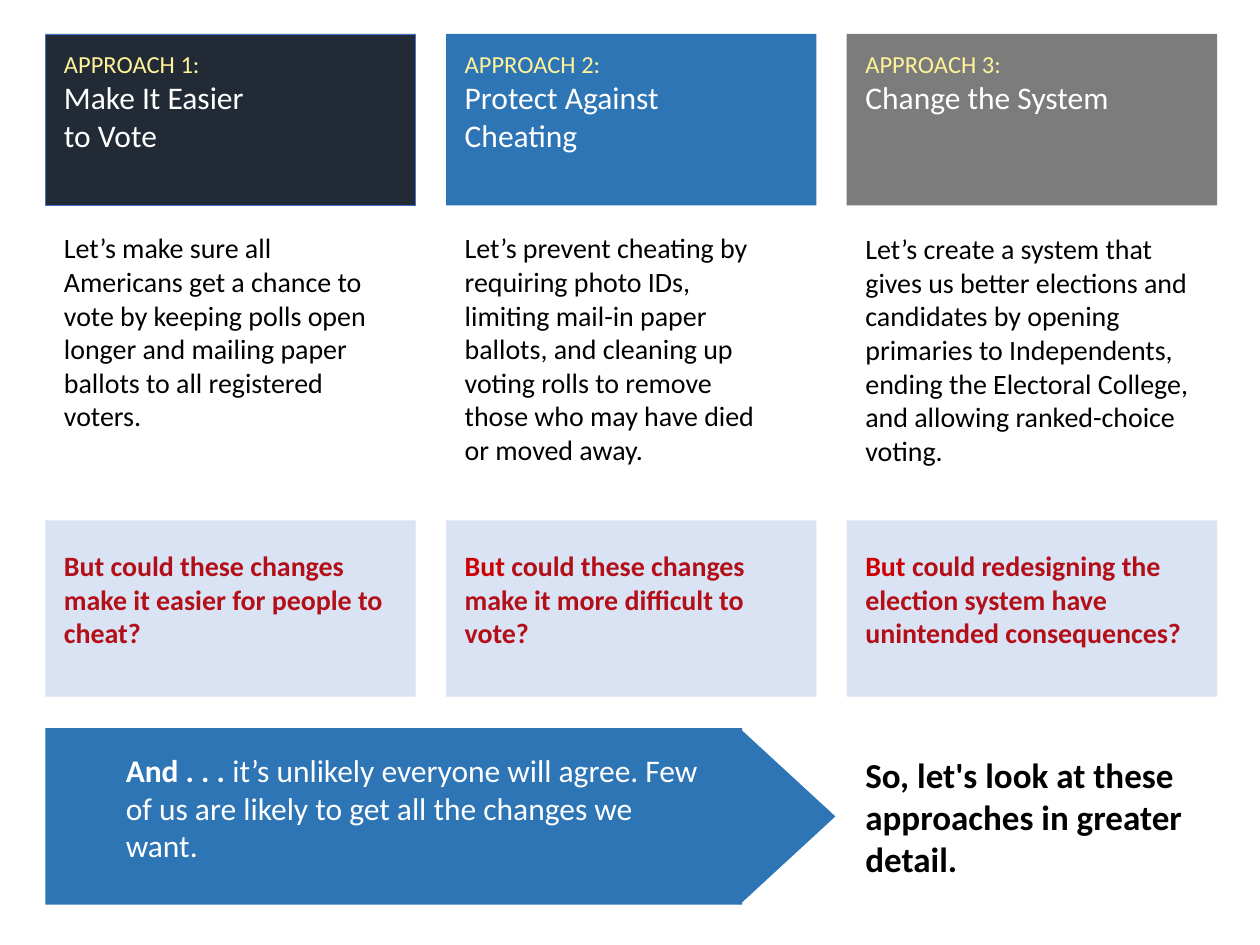
from pptx import Presentation
from pptx.dml.color import RGBColor
from pptx.enum.shapes import MSO_SHAPE
from pptx.enum.text import MSO_ANCHOR
from pptx.util import Inches, Pt

RECT, TRIANGLE = MSO_SHAPE.RECTANGLE, MSO_SHAPE.ISOSCELES_TRIANGLE
TOP, MIDDLE = MSO_ANCHOR.TOP, MSO_ANCHOR.MIDDLE

COLORS = {
    "navy": "222A35", "blue": "2E75B6", "gray": "7C7C7C", "pale": "DAE3F3",
    "outline": "4472C4", "yellow": "FFF399", "white": "FFFFFF",
    "black": "000000", "red": "CC0000", "dark_red": "B30F18",
}
FONT = "Calibri"

# Three-column grid, in inches
LEFT, PITCH, COL_W, TEXT_DX = 0.36, 3.18, 2.94, 0.05
HEAD_Y, HEAD_H = 0.27, 1.36
QUESTION_Y, QUESTION_H = 4.13, 1.4
ARROW_Y, ARROW_H, ARROW_W, TIP = 5.78, 1.4, 5.53, 0.76
HEAD_LINE = 22  # points taken by one heading line

# fill, heading, heading lines, body, lead of question, rest, text width
APPROACHES = [
    ("navy", "Make It Easier \vto Vote", 2,
     "Let’s make sure all\vAmericans get a chance to vote by keeping polls "
     "open longer and mailing paper ballots to all registered voters.",
     "", "But could these changes make it easier for people to cheat?", 2.66),
    ("blue", "Protect Against Cheating", 2,
     "Let’s prevent cheating by requiring photo IDs, limiting mail-in paper "
     "ballots, and cleaning up voting rolls to remove those who may have died "
     "or moved away.",
     "But", " could these changes make it more difficult to vote?", 2.66),
    ("gray", "Change the System", 1,
     "Let’s create a system that gives us better elections and candidates by "
     "opening primaries to Independents, ending the Electoral College, and "
     "allowing ranked-choice voting.",
     "But", " could redesigning the election system have unintended "
     "consequences?", 2.83),
]


def rgb(name):
    return RGBColor.from_string(COLORS[name])


def add_panel(s, x, y, w, h, fill, kind=RECT, line=None):
    sp = s.shapes.add_shape(kind, Inches(x), Inches(y), Inches(w), Inches(h))
    sp.shadow.inherit = False
    sp.fill.solid()
    sp.fill.fore_color.rgb = rgb(fill)
    if line:
        sp.line.color.rgb = rgb(line)
        sp.line.width = Pt(0.5)
    else:
        sp.line.fill.background()
    return sp


def add_text_box(s, x, y, w, h, anchor=TOP):
    tf = s.shapes.add_textbox(Inches(x), Inches(y), Inches(w), Inches(h)).text_frame
    tf.word_wrap = True
    tf.vertical_anchor = anchor
    return tf


def add_run(p, text, size=16, color="black", bold=False):
    """Add text to a paragraph; each \\v becomes a line break."""
    for i, part in enumerate(text.split("\v")):
        if i:
            p.add_line_break()
        r = p.add_run()
        r.text = part
        r.font.name = FONT
        r.font.size = Pt(size)
        r.font.bold = bold
        r.font.color.rgb = rgb(color)


def add_approach(s, i, fill, heading, lines, body, lead, rest, text_w):
    x = LEFT + i * PITCH
    add_panel(s, x, HEAD_Y, COL_W, HEAD_H, fill,
              line="outline" if i == 0 else None)
    add_panel(s, x, QUESTION_Y, COL_W, QUESTION_H, "pale")

    tf = add_text_box(s, x + TEXT_DX, 0.34, text_w, 3.43)
    p = tf.paragraphs[0]
    add_run(p, f"APPROACH {i + 1}:", size=14, color="yellow")
    add_run(tf.add_paragraph(), heading, size=18, color="white")
    p = tf.add_paragraph()
    p.space_before = Pt(HEAD_LINE * (4 - lines))
    add_run(p, body)

    tf = add_text_box(s, x + TEXT_DX, QUESTION_Y, 2.83, 1.25, MIDDLE)
    p = tf.paragraphs[0]
    if lead:
        add_run(p, lead, color="red", bold=True)
    add_run(p, rest, color="dark_red", bold=True)


def add_conclusion(s):
    add_panel(s, LEFT, ARROW_Y, ARROW_W, ARROW_H, "blue")
    # Turned a quarter, the triangle's base lies along the bar's right end
    center_x = LEFT + ARROW_W + TIP / 2 - 0.02
    tip = add_panel(s, center_x - ARROW_H / 2, ARROW_Y + (ARROW_H - TIP) / 2,
                    ARROW_H, TIP, "blue", TRIANGLE)
    tip.rotation = 90

    p = add_text_box(s, 0.9, 5.91, 4.83, 1.31).paragraphs[0]
    add_run(p, "And . . .", size=18, color="white", bold=True)
    add_run(p, " it’s unlikely everyone will agree. Few of us are likely to "
            "get all the changes we want.", size=18, color="white")

    p = add_text_box(s, LEFT + 2 * PITCH + TEXT_DX, 5.93, 2.73, 1.11).paragraphs[0]
    add_run(p, "So, let's look at these approaches in greater detail.",
            size=20, bold=True)


def main():
    prs = Presentation()
    prs.slide_width, prs.slide_height = Inches(10), Inches(7.5)
    s = prs.slides.add_slide(prs.slide_layouts[6])
    for i, approach in enumerate(APPROACHES):
        add_approach(s, i, *approach)
    add_conclusion(s)
    prs.save("out.pptx")


if __name__ == "__main__":
    main()
